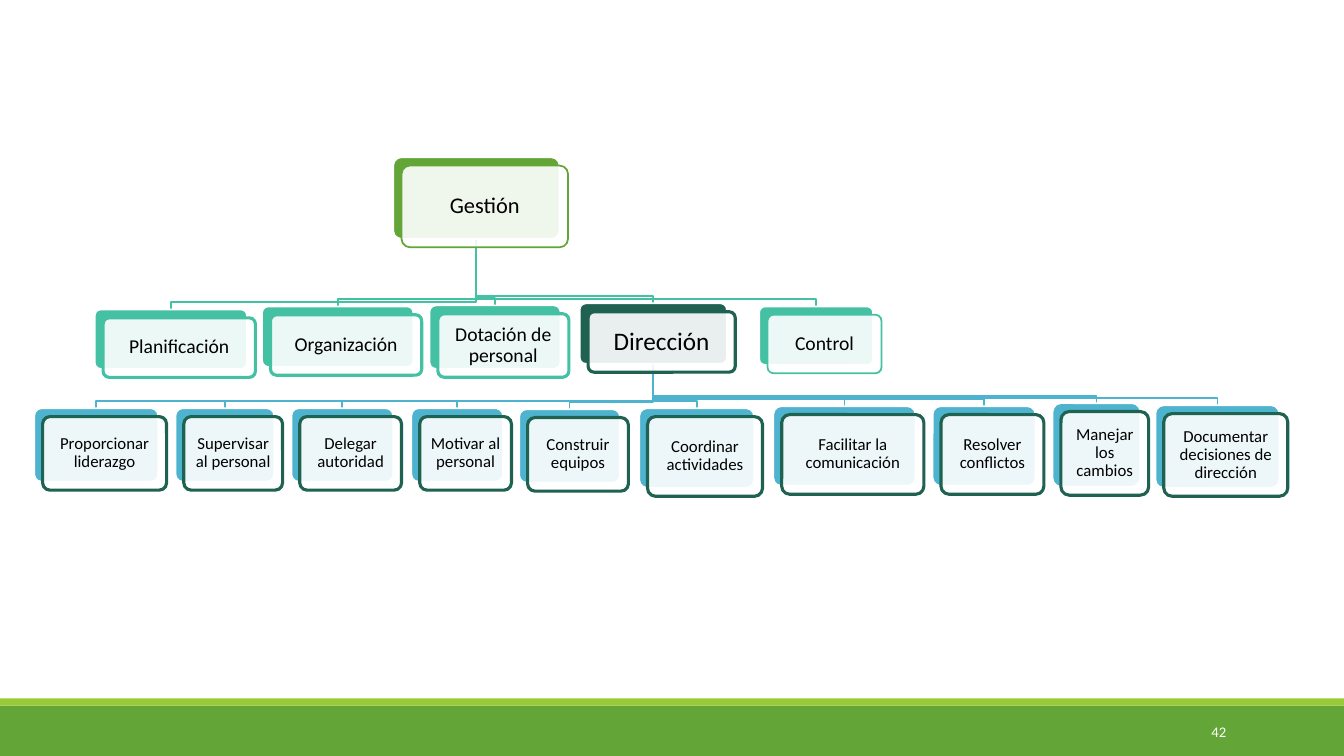
"""Build a management organisation chart slide with three levels."""
from lxml import etree
from pptx import Presentation
from pptx import util as u
from pptx.dml.color import RGBColor
from pptx.enum import shapes, text
from pptx.oxml.ns import qn

GREEN = RGBColor(0x63, 0xA5, 0x37)
LIME = RGBColor(0x99, 0xCB, 0x38)
TEAL = RGBColor(0x44, 0xC1, 0xA3)
DARK_TEAL = RGBColor(0x20, 0x62, 0x52)
BLUE = RGBColor(0x4E, 0xB3, 0xCF)
WHITE = RGBColor(0xFF, 0xFF, 0xFF)
BLACK = RGBColor(0, 0, 0)

FONT = "Calibri"
PAGE_NUMBER = "42"
CARD_SHIFT = 0.083
BEND_RISE = 0.07

# label, (left, top, width, height), back fill, front outline, outline points, text size, inset
ROOT = ("Gestión", (3.9, 1.56, 1.65, 0.81), GREEN, GREEN, 1.25, 16, 0.09)
DIRECTION = ("Dirección", (5.75, 3.01, 1.46, 0.6), DARK_TEAL, DARK_TEAL, 2.25, 18, 0.09)
FUNCTIONS = [
    (label, box, TEAL, TEAL, outline, 14, 0.08)
    for label, box, outline in [
        ("Planificación", (0.94, 3.07, 1.51, 0.59), 2.25),
        ("Organización", (2.6, 3.04, 1.5, 0.6), 2.25),
        ("Dotación de personal", (4.26, 3.03, 1.3, 0.63), 2.25),
        ("Control", (7.53, 3.04, 1.13, 0.58), 1.25),
    ]
] + [DIRECTION]
TASKS = [
    (label, box, BLUE, DARK_TEAL, 2.25, 12, 0.07)
    for label, box in [
        ("Proporcionar liderazgo", (0.34, 4.05, 1.23, 0.73)),
        ("Supervisar al personal", (1.74, 4.05, 0.98, 0.73)),
        ("Delegar autoridad", (2.89, 4.05, 1.01, 0.73)),
        ("Motivar al personal", (4.08, 4.05, 0.91, 0.73)),
        ("Construir equipos", (5.15, 4.06, 1, 0.73)),
        ("Coordinar actividades", (6.34, 4.05, 1.14, 0.79)),
        ("Facilitar la comunicación", (7.67, 4.03, 1.41, 0.79)),
        ("Resolver conflictos", (9.25, 4.03, 1.02, 0.79)),
        ("Manejar los cambios", (10.44, 4, 0.87, 0.83)),
        ("Documentar decisiones de dirección", (11.46, 4.02, 1.23, 0.82)),
    ]
]
BRANCHES = [(ROOT, FUNCTIONS, TEAL), (DIRECTION, TASKS, BLUE)]
BANDS = [((0, 7, 13.33, 0.5), GREEN), ((0, 6.93, 13.33, 0.07), LIME)]


def add_block(slide, kind, box, fill, line=None, points=1.25):
    block = slide.shapes.add_shape(kind, *map(u.Inches, box))
    block.shadow.inherit = False
    block.fill.solid()
    block.fill.fore_color.rgb = fill
    if line is None:
        block.line.fill.background()
    else:
        block.line.color.rgb = line
        block.line.width = u.Pt(points)
    return block


def write(frame, words, size, color, align):
    frame.word_wrap = True
    frame.vertical_anchor = text.MSO_ANCHOR.MIDDLE
    paragraph = frame.paragraphs[0]
    paragraph.text = words
    paragraph.alignment = align
    paragraph.font.name = FONT
    paragraph.font.size = u.Pt(size)
    paragraph.font.color.rgb = color
    return paragraph


def add_branch(slide, parent, child, color):
    left, top, width, height = parent[1]
    start_x, start_y = left + width / 2, top + height
    left, end_y, width, _ = child[1]
    end_x, bend_y = left + width / 2, end_y - BEND_RISE
    points = [(start_x, start_y), (start_x, bend_y), (end_x, bend_y), (end_x, end_y)]
    corners = [(u.Inches(x), u.Inches(y)) for x, y in points]
    builder = slide.shapes.build_freeform(*corners[0])
    builder.add_line_segments(corners[1:], close=False)
    branch = builder.convert_to_shape()
    branch.shadow.inherit = False
    branch.fill.background()
    branch.line.color.rgb = color
    branch.line.width = u.Pt(1.25)


def add_card(slide, label, box, fill, outline, points, size, inset):
    left, top, width, height = box
    rounded = shapes.MSO_SHAPE.ROUNDED_RECTANGLE
    back = add_block(slide, rounded, box, fill, WHITE)
    front_box = (left + CARD_SHIFT, top + CARD_SHIFT, width, height)
    front = add_block(slide, rounded, front_box, WHITE, outline, points)
    back.adjustments[0] = front.adjustments[0] = 0.1
    white_fill = front.fill._xPr.find(qn("a:solidFill"))
    etree.SubElement(white_fill[0], qn("a:alpha"), val="90000")
    frame = front.text_frame
    frame.margin_left = frame.margin_right = u.Inches(inset)
    frame.margin_top = frame.margin_bottom = u.Inches(inset)
    paragraph = write(frame, label, size, BLACK, text.PP_ALIGN.CENTER)
    paragraph.line_spacing = 0.9


def main():
    deck = Presentation()
    deck.slide_width, deck.slide_height = u.Inches(13.33), u.Inches(7.5)
    slide = deck.slides.add_slide(deck.slide_layouts[6])
    for box, color in BANDS:
        add_block(slide, shapes.MSO_SHAPE.RECTANGLE, box, color)
    number = slide.shapes.add_textbox(*map(u.Inches, (10.83, 7.06, 1.43, 0.4)))
    write(number.text_frame, PAGE_NUMBER, 10.5, WHITE, text.PP_ALIGN.RIGHT)
    for parent, children, color in BRANCHES:
        for child in children:
            add_branch(slide, parent, child, color)
    for card in [ROOT, *FUNCTIONS, *TASKS]:
        add_card(slide, *card)
    deck.save("out.pptx")


if __name__ == "__main__":
    main()
